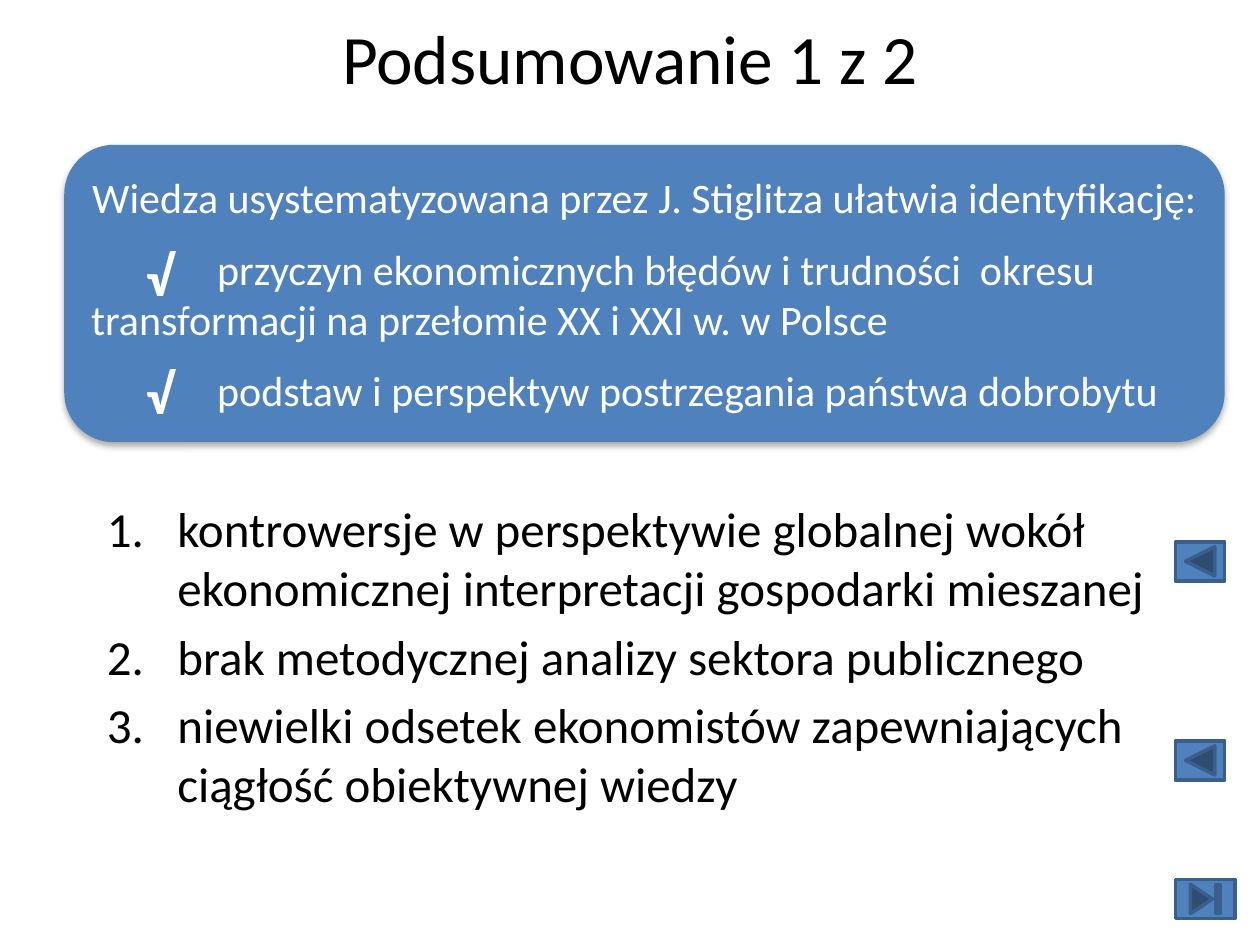
from lxml.etree import SubElement
from pptx import Presentation
from pptx.dml.color import RGBColor
from pptx.enum.shapes import MSO_SHAPE
from pptx.enum.text import MSO_ANCHOR, PP_ALIGN
from pptx.oxml.ns import qn
from pptx.util import Inches, Pt

BLACK = RGBColor(0x00, 0x00, 0x00)
WHITE = RGBColor(0xFF, 0xFF, 0xFF)
BLUE = RGBColor(0x4F, 0x81, 0xBD)
DARK_BLUE = RGBColor(0x3A, 0x5F, 0x8C)
FONT = "Calibri"

TITLE = "Podsumowanie 1 z 2"
PANEL_HEADING = "Wiedza usystematyzowana przez J. Stiglitza ułatwia identyfikację:"
PANEL_POINTS = [
    "przyczyn ekonomicznych błędów i trudności  okresu "
    "transformacji na przełomie XX i XXI w. w Polsce",
    "podstaw i perspektyw postrzegania państwa dobrobytu",
]
NUMBERED_POINTS = [
    "kontrowersje w perspektywie globalnej wokół ekonomicznej interpretacji gospodarki mieszanej",
    "brak metodycznej analizy sektora publicznego",
    "niewielki odsetek ekonomistów zapewniających ciągłość obiektywnej wiedzy",
]
CHECK_MARK_TOPS = [1.86, 2.8]
BUTTON_LEFT, BUTTON_HEIGHT = 9.33, 0.31
BUTTONS = [  # shape, top, width
    (MSO_SHAPE.ACTION_BUTTON_BACK_OR_PREVIOUS, 4.3, 0.39),
    (MSO_SHAPE.ACTION_BUTTON_BACK_OR_PREVIOUS, 5.88, 0.39),
    (MSO_SHAPE.ACTION_BUTTON_END, 6.98, 0.47),
]


def inches(*lengths):
    return [Inches(length) for length in lengths]


def add_run(paragraph, text, size, color, bold=False):
    run = paragraph.add_run()
    run.text = text
    run.font.name = FONT
    run.font.size = Pt(size)
    run.font.bold = bold
    run.font.color.rgb = color


def paragraphs_for(text_frame, texts):
    """Yield one paragraph with each text, starting with the frame's first."""
    for index, text in enumerate(texts):
        yield (text_frame.add_paragraph() if index else text_frame.paragraphs[0]), text


def add_soft_shadow(shape):
    effects = SubElement(shape._element.spPr, qn("a:effectLst"))
    shadow = SubElement(effects, qn("a:outerShdw"), blurRad=str(Pt(3.5)),
                        dist=str(Pt(2.2)), dir="5400000", rotWithShape="0")
    color = SubElement(shadow, qn("a:srgbClr"), val="000000")
    SubElement(color, qn("a:alpha"), val="32000")


def add_title(slide):
    title = slide.shapes.title
    title.left, title.top, title.width, title.height = inches(0.5, 0.22, 9, 0.46)
    title.text_frame.vertical_anchor = MSO_ANCHOR.MIDDLE
    paragraph = title.text_frame.paragraphs[0]
    paragraph.alignment = PP_ALIGN.CENTER
    add_run(paragraph, TITLE, 39.6, BLACK)


def add_panel(slide):
    panel = slide.shapes.add_shape(MSO_SHAPE.ROUNDED_RECTANGLE, *inches(0.51, 1.15, 9.21, 2.36))
    panel.fill.solid()
    panel.fill.fore_color.rgb = BLUE
    panel.line.fill.background()
    add_soft_shadow(panel)
    frame = panel.text_frame
    frame.word_wrap = True
    frame.vertical_anchor = MSO_ANCHOR.MIDDLE
    for paragraph, text in paragraphs_for(frame, [PANEL_HEADING] + PANEL_POINTS):
        if text == PANEL_HEADING:
            paragraph.alignment = PP_ALIGN.CENTER
        else:
            paragraph.alignment = PP_ALIGN.LEFT
            paragraph.space_before = Pt(12)
            properties = paragraph._p.get_or_add_pPr()
            properties.set("marL", "0")
            properties.set("indent", str(Inches(1)))
        add_run(paragraph, text, 24, WHITE)


def add_check_mark(slide, top):
    box = slide.shapes.add_textbox(*inches(1.06, top, 0.39, 0.64))
    box.fill.solid()
    box.fill.fore_color.rgb = BLUE
    box.text_frame.word_wrap = True
    add_run(box.text_frame.paragraphs[0], "√", 32, WHITE, bold=True)


def add_numbered_list(slide):
    box = slide.shapes.add_textbox(*inches(0.75, 3.91, 8.66, 2.91))
    box.text_frame.word_wrap = True
    for paragraph, text in paragraphs_for(box.text_frame, NUMBERED_POINTS):
        paragraph.space_before = Pt(5.6)
        properties = paragraph._p.get_or_add_pPr()
        properties.set("marL", str(Inches(0.56)))
        properties.set("indent", str(Inches(-0.56)))
        SubElement(properties, qn("a:buFont"), typeface="+mj-lt")
        SubElement(properties, qn("a:buAutoNum"), type="arabicPeriod")
        add_run(paragraph, text, 28, BLACK)


def add_button(slide, kind, top, width):
    button = slide.shapes.add_shape(kind, *inches(BUTTON_LEFT, top, width, BUTTON_HEIGHT))
    button.shadow.inherit = False
    button.fill.solid()
    button.fill.fore_color.rgb = BLUE
    button.line.color.rgb = DARK_BLUE
    button.line.width = Pt(2)


def main():
    presentation = Presentation()
    presentation.slide_width, presentation.slide_height = inches(10, 7.5)
    slide = presentation.slides.add_slide(presentation.slide_layouts.get_by_name("Title Only"))
    add_title(slide)
    add_numbered_list(slide)
    add_panel(slide)
    for button in BUTTONS:
        add_button(slide, *button)
    for top in CHECK_MARK_TOPS:
        add_check_mark(slide, top)
    presentation.save("out.pptx")


if __name__ == "__main__":
    main()
